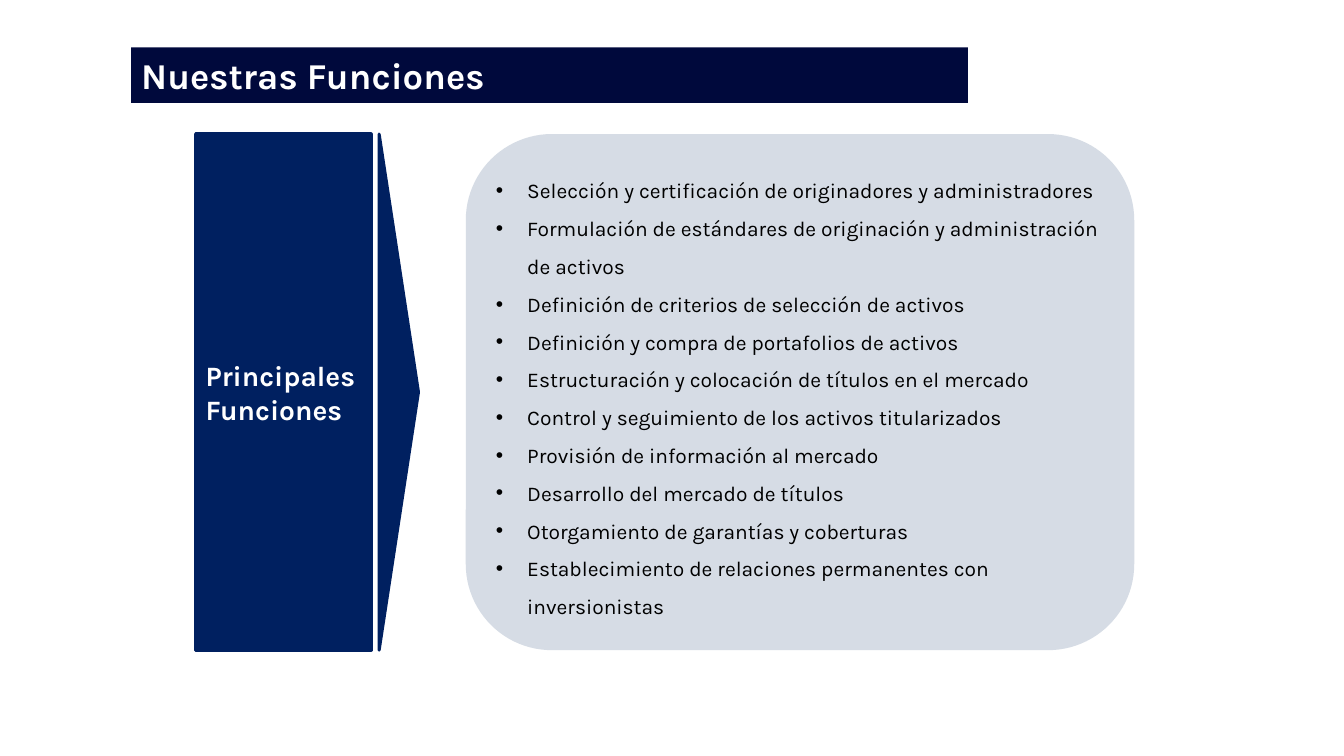
import pptx
import pptx.util
import pptx.dml.color
import pptx.enum.shapes
import pptx.enum.text
import pptx.oxml
from pptx.util import Inches

COLORS = {"title": "00093C", "navy": "002060", "panel": "D6DCE5",
          "white": "FFFFFF", "black": "000000"}
FUNCTIONS = [
    "Selección y certificación de originadores y administradores",
    "Formulación de estándares de originación y administración de activos",
    "Definición de criterios de selección de activos",
    "Definición y compra de portafolios de activos",
    "Estructuración y colocación de títulos en el mercado",
    "Control y seguimiento de los activos titularizados",
    "Provisión de información al mercado",
    "Desarrollo del mercado de títulos",
    "Otorgamiento de garantías y coberturas",
    "Establecimiento de relaciones permanentes con inversionistas",
]
TOP, HEIGHT = 1.33, 5.12
SHAPES = pptx.enum.shapes.MSO_SHAPE


def rgb(name):
    """Return the named colour."""
    return pptx.dml.color.RGBColor.from_string(COLORS[name])


def add_bullet(p, indent):
    """Give a paragraph a hanging round bullet."""
    pPr = p._p.get_or_add_pPr()
    pPr.set("marL", str(Inches(indent)))
    pPr.set("indent", str(Inches(-indent)))
    ns = 'xmlns:a="http://schemas.openxmlformats.org/drawingml/2006/main"'
    for tag in ('buFont {} typeface="Arial"', 'buChar {} char="•"'):
        pPr.append(pptx.oxml.parse_xml(f"<a:{tag.format(ns)}/>"))


def write(tf, lines, size, color, bold=False, spacing=1.0, bullet=None,
          wrap=True, inset=None):
    """Fill a text frame with left-aligned paragraphs."""
    tf.word_wrap = wrap
    tf.auto_size = pptx.enum.text.MSO_AUTO_SIZE.NONE
    tf.vertical_anchor = pptx.enum.text.MSO_ANCHOR.MIDDLE
    if inset is not None:
        tf.margin_left = tf.margin_right = Inches(inset)
        tf.margin_top = tf.margin_bottom = Inches(inset)
    for i, line in enumerate(lines):
        p = tf.add_paragraph() if i else tf.paragraphs[0]
        p.alignment = pptx.enum.text.PP_ALIGN.LEFT
        p.line_spacing = spacing
        p.space_before = pptx.util.Pt(0)
        if bullet:
            add_bullet(p, bullet)
        r = p.add_run()
        r.text = line
        r.font.name = "Karla"
        r.font.size = pptx.util.Pt(size)
        r.font.bold = bold
        r.font.color.rgb = rgb(color)


class Deck:
    """Hold the presentation, its style and the current slide."""

    def __init__(self):
        """Open a widescreen presentation with one title-only slide."""
        self.prs = pptx.Presentation()
        self.prs.slide_width = Inches(13.33)
        self.prs.slide_height = Inches(7.5)
        self.s = self.prs.slides.add_slide(self.prs.slide_layouts[5])

    def title(self, text, x, y, w, h):
        """Place the title on its coloured band."""
        sp = self.s.shapes.title
        sp.left, sp.top, sp.width, sp.height = map(Inches, (x, y, w, h))
        sp.fill.solid()
        sp.fill.fore_color.rgb = rgb("title")
        write(sp.text_frame, [text], 26, "white", bold=True)

    def shape(self, kind, x, w, fill, outlined=False):
        """Add a full-height preset shape and return it."""
        sp = self.s.shapes.add_shape(kind, *map(Inches, (x, TOP, w, HEIGHT)))
        sp.shadow.inherit = False
        sp.fill.solid()
        sp.fill.fore_color.rgb = rgb(fill)
        if outlined:
            sp.line.color.rgb = rgb(fill)
            sp.line.width = pptx.util.Pt(2.25)
        else:
            sp.line.fill.background()
        return sp


def main():
    """Build and save the slide."""
    deck = Deck()
    heading = deck.shape(SHAPES.RECTANGLE, 1.94, 1.74, "navy", outlined=True)
    write(heading.text_frame, ["Principales", "Funciones"], 20, "white",
          bold=True, wrap=False)
    pointer = deck.shape(SHAPES.PENTAGON, 3.76, 0.39, "navy", outlined=True)
    pointer.adjustments[0] = 2.07
    deck.title("Nuestras Funciones", 1.3, 0.47, 8.3, 0.55)
    panel = deck.shape(SHAPES.ROUNDED_RECTANGLE, 4.62, 6.63, "panel")
    write(panel.text_frame, FUNCTIONS, 15, "black", spacing=1.5,
          bullet=0.31, inset=0.05)
    deck.prs.save("out.pptx")


if __name__ == "__main__":
    main()
